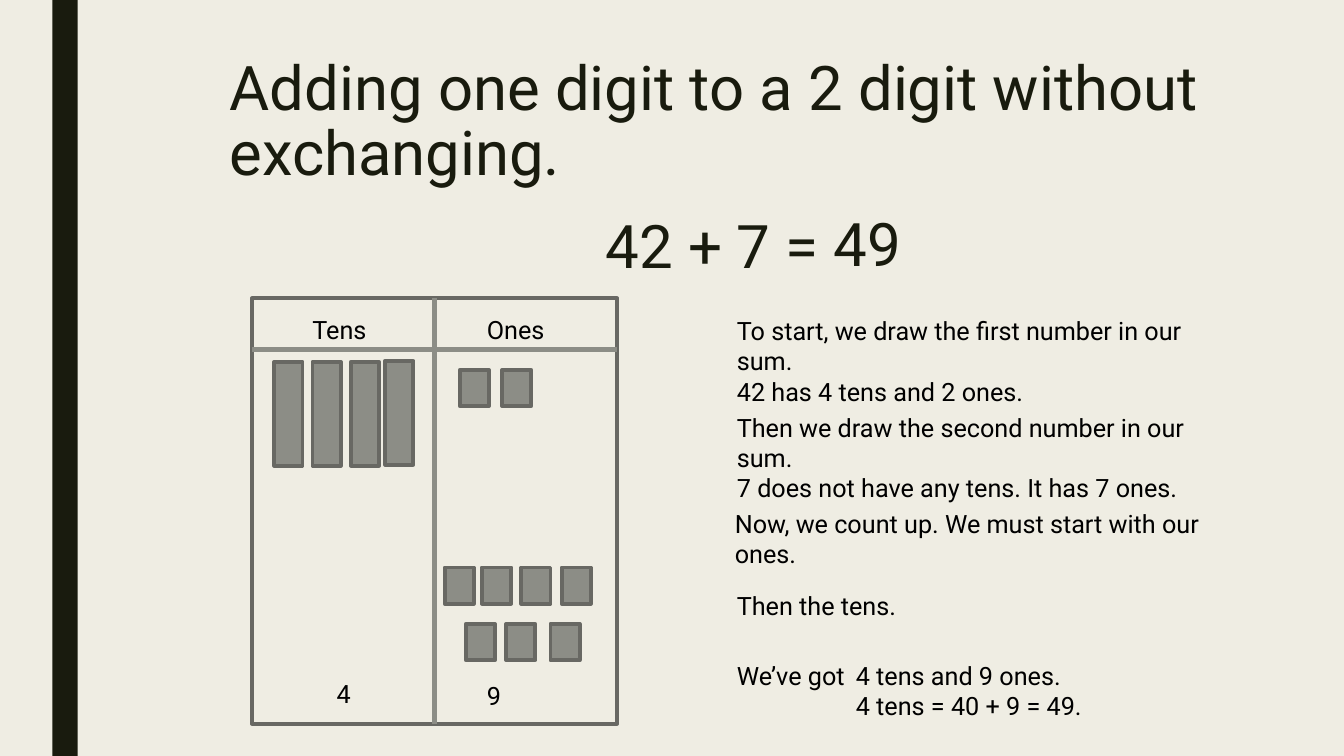
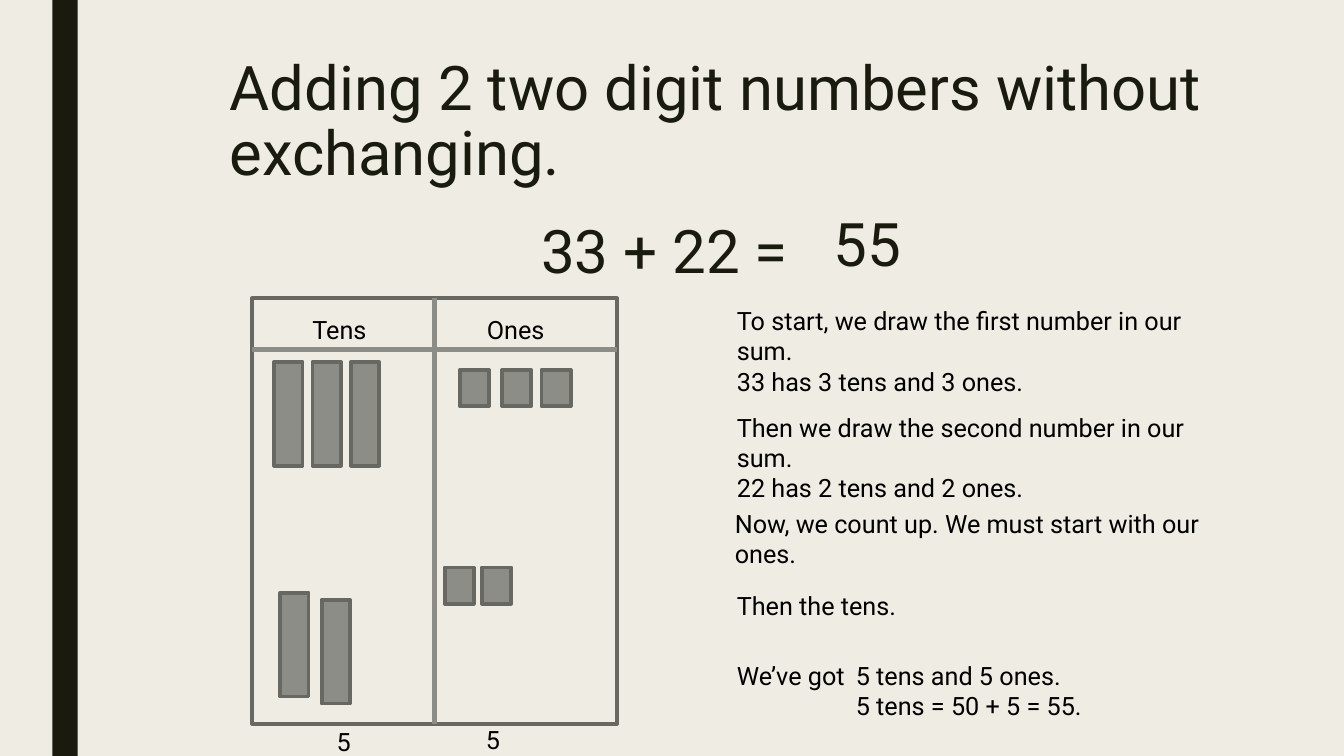
import pptx
import pptx.util
import pptx.dml.color
import pptx.enum.shapes
import lxml.etree
import pptx.oxml.ns

Inches, Pt = pptx.util.Inches, pptx.util.Pt
RGBColor = pptx.dml.color.RGBColor
RECT = pptx.enum.shapes.MSO_SHAPE.RECTANGLE
STRAIGHT = pptx.enum.shapes.MSO_CONNECTOR.STRAIGHT
qn = pptx.oxml.ns.qn

FONT = "Roboto"
CREAM = RGBColor(0xEF, 0xED, 0xE3)
DARK = RGBColor(0x19, 0x1B, 0x0E)
BLACK = RGBColor(0, 0, 0)
GREY = RGBColor(0x8C, 0x8D, 0x86)
EDGE = RGBColor(0x68, 0x68, 0x63)

# Place value chart: left, top, width, height
CHART = (2.5, 2.96, 3.62, 4.22)
HEADER_Y = 3.47
ROD = (0.28, 1.03)
CUBE = (0.29, 0.36)
STEP_WIDTH = 5.08
RESULT_TAB = 1.18

# Block positions used on both slides
TOP_RODS = [(2.72 + 0.38 * i, 3.59) for i in range(3)]
TOP_CUBES = [(4.56, 3.67), (4.98, 3.67)]
LOW_CUBES = [(4.41, 5.63), (4.78, 5.63)]

COUNT_UP = (7.19, 4.99, ["Now, we count up. We must start with our ones."])
THEN_TENS = (7.21, 5.81, ["Then the tens."])

SLIDES = [
    {
        "title": "Adding one digit to a 2 digit without exchanging.",
        "sum": (5.91, 2.16, "42 + 7 ="),
        "answer": "49",
        "rods": TOP_RODS + [(3.82, 3.58)],
        "cubes": TOP_CUBES + LOW_CUBES + [
            (5.17, 5.63), (5.57, 5.63),
            (4.62, 6.19), (5.02, 6.19), (5.46, 6.19)],
        "totals": [(3.24, 6.68, "4"), (4.73, 6.7, "9")],
        "steps": [
            (7.21, 3.08, ["To start, we draw the first number in our sum.",
                          "42 has 4 tens and 2 ones."]),
            (7.21, 4.04, ["Then we draw the second number in our sum.",
                          "7 does not have any tens. It has 7 ones."]),
            COUNT_UP,
            THEN_TENS,
            (7.21, 6.5, ["We’ve got\t4 tens and 9 ones.",
                         "\t4 tens = 40 + 9 = 49."]),
        ],
    },
    {
        "title": "Adding 2 two digit numbers without exchanging.",
        "sum": (5.27, 2.21, "33 + 22 ="),
        "answer": "55",
        "rods": TOP_RODS + [(2.78, 5.88), (3.19, 5.95)],
        "cubes": TOP_CUBES + [(5.37, 3.67)] + LOW_CUBES,
        "totals": [(3.24, 7.16, "5"), (4.72, 7.14, "5")],
        "steps": [
            (7.21, 2.98, ["To start, we draw the first number in our sum.",
                          "33 has 3 tens and 3 ones."]),
            (7.21, 4.04, ["Then we draw the second number in our sum.",
                          "22 has 2 tens and 2 ones."]),
            COUNT_UP,
            THEN_TENS,
            (7.21, 6.5, ["We’ve got\t5 tens and 5 ones.",
                         "\t5 tens = 50 + 5 = 55."]),
        ],
    },
]


def add_text(s, box, lines, size=18, color=BLACK, spacing=None):
    sp = s.shapes.add_textbox(*map(Inches, box))
    tf = sp.text_frame
    tf.word_wrap = True
    for i, line in enumerate(lines):
        p = tf.paragraphs[0] if i == 0 else tf.add_paragraph()
        if spacing:
            p.line_spacing = spacing
        if "\t" in line:
            add_tab_stop(p)
        r = p.add_run()
        r.text = line
        r.font.name, r.font.size, r.font.color.rgb = FONT, Pt(size), color


def add_tab_stop(p):
    tabs = lxml.etree.SubElement(p._p.get_or_add_pPr(), qn("a:tabLst"))
    lxml.etree.SubElement(tabs, qn("a:tab"), pos=str(Inches(RESULT_TAB)), algn="l")


def add_rect(s, box, fill=None, line=None):
    sp = s.shapes.add_shape(RECT, *map(Inches, box))
    sp.shadow.inherit = False
    if fill is None:
        sp.fill.background()
    else:
        sp.fill.solid()
        sp.fill.fore_color.rgb = fill
    if line is None:
        sp.line.fill.background()
    else:
        sp.line.color.rgb, sp.line.width = line, Pt(2.75)
    return sp


def add_divider(s, x1, y1, x2, y2):
    line = s.shapes.add_connector(STRAIGHT, *map(Inches, (x1, y1, x2, y2)))
    line.line.color.rgb, line.line.width = GREY, Pt(3.75)
    lxml.etree.SubElement(line._element.spPr, qn("a:effectLst"))
    return line


def add_chart_frame(s):
    x, y, w, h = CHART
    frame = add_rect(s, CHART, line=EDGE)
    middle = add_divider(s, x + w / 2, y, x + w / 2, y + h)
    middle.begin_connect(frame, 0)
    middle.end_connect(frame, 2)
    add_divider(s, x, HEADER_Y, x + w, HEADER_Y)
    for left, label in ((3, "Tens"), (4.73, "Ones")):
        add_text(s, (left, 3.07, 1.56, 0.4), [label])


def add_sum_slide(prs, data):
    s = prs.slides.add_slide(prs.slide_layouts[6])
    # Side band, title and sum
    add_rect(s, (0.52, 0, 0.25, 7.5), fill=DARK)
    add_text(s, (2.18, 0.52, 10.5, 1.62), [data["title"]], 44, DARK, 0.89)
    for x, y, text in (data["sum"], (8.17, 2.14, data["answer"])):
        add_text(s, (x, y, 3, 0.67), [text], 42.9, DARK, 0.79)
    # Place value chart with its blocks and totals
    add_chart_frame(s)
    for size, places in ((ROD, data["rods"]), (CUBE, data["cubes"])):
        for place in places:
            add_rect(s, place + size, GREY, EDGE)
    for x, y, total in data["totals"]:
        add_text(s, (x, y, 1.56, 0.4), [total])
    # Explanation steps
    for x, y, lines in data["steps"]:
        add_text(s, (x, y, STEP_WIDTH, 0.71), lines)


def main():
    prs = pptx.Presentation()
    prs.slide_width, prs.slide_height = Inches(13.33), Inches(7.5)
    background = prs.slide_master.background.fill
    background.solid()
    background.fore_color.rgb = CREAM
    for data in SLIDES:
        add_sum_slide(prs, data)
    prs.save("out.pptx")


if __name__ == "__main__":
    main()
